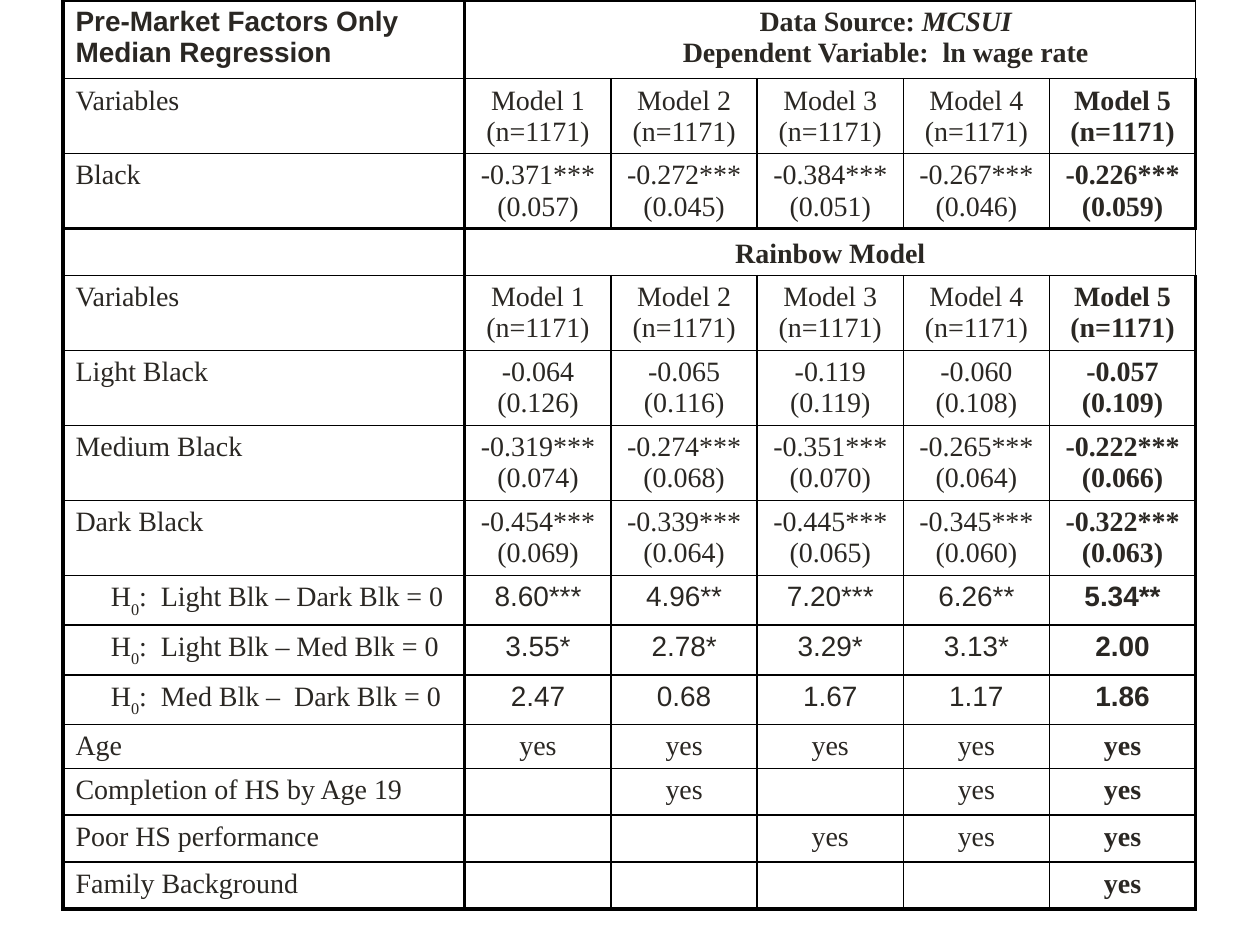
import dataclasses

import lxml.etree
import pptx
import pptx.dml.color
import pptx.enum.text
import pptx.oxml.ns
import pptx.table
import pptx.util

PX = pptx.util.Inches(1) // 200
COLORS = {"text": "2A2723", "border": "000000"}
SERIF, SANS = "Times New Roman", "Arial"
TEXT_SIZE = pptx.util.Pt(16)
THIN, THICK = pptx.util.Pt(1), pptx.util.Pt(2)
LEFT, CENTER = pptx.enum.text.PP_ALIGN.LEFT, pptx.enum.text.PP_ALIGN.CENTER
LABEL_WIDTH, MODEL_WIDTH, MODEL_COUNT = 638, 232, 5
HEADER_HEIGHT, DOUBLE_HEIGHT, TEST_HEIGHT, SINGLE_HEIGHT = 125, 119, 79, 69
TEST_INDENT, HEADER_INDENT = 56, 176


@dataclasses.dataclass
class Span:
    text: str
    bold: bool = False
    italic: bool = False
    font: str = SERIF
    subscript: bool = False


Lines = list[list[Span]]


@dataclasses.dataclass
class Row:
    label: Lines
    values: list[str] = dataclasses.field(default_factory=list)
    height: int = SINGLE_HEIGHT
    value_font: str = SERIF
    label_indent: int = 0
    banner: Lines | None = None
    banner_indent: int = 0


def plain(text: str) -> Lines:
    return [[Span(text)]]


def model_row() -> Row:
    names = [f"Model {number}\n(n=1171)" for number in range(1, MODEL_COUNT + 1)]
    return Row(plain("Variables"), names, DOUBLE_HEIGHT)


def estimate_row(label: str, estimates: str, errors: str) -> Row:
    """Row of coefficients with standard errors in brackets below them."""
    pairs = zip(estimates.split(), errors.split())
    return Row(plain(label), [f"{value}\n({error})" for value, error in pairs], DOUBLE_HEIGHT)


def test_row(hypothesis: str, statistics: str) -> Row:
    label = [[Span("H"), Span("0", subscript=True), Span(f":  {hypothesis} = 0")]]
    return Row(label, statistics.split(), TEST_HEIGHT, SANS, TEST_INDENT)


def control_row(label: str, included: set[int]) -> Row:
    """Row that says yes for each model number with this control."""
    models = range(1, MODEL_COUNT + 1)
    return Row(plain(label), ["yes" if number in included else "" for number in models])


ROWS = [
    Row(
        [[Span("Pre-Market Factors Only Median Regression", bold=True, font=SANS)]],
        height=HEADER_HEIGHT,
        banner=[
            [Span("Data Source: ", bold=True), Span("MCSUI", bold=True, italic=True)],
            [Span("Dependent Variable:  ln wage rate", bold=True)],
        ],
        banner_indent=HEADER_INDENT,
    ),
    model_row(),
    estimate_row("Black", "-0.371*** -0.272*** -0.384*** -0.267*** -0.226***",
                 "0.057 0.045 0.051 0.046 0.059"),
    Row([], banner=[[Span("Rainbow Model", bold=True)]]),
    model_row(),
    estimate_row("Light Black", "-0.064 -0.065 -0.119 -0.060 -0.057",
                 "0.126 0.116 0.119 0.108 0.109"),
    estimate_row("Medium Black", "-0.319*** -0.274*** -0.351*** -0.265*** -0.222***",
                 "0.074 0.068 0.070 0.064 0.066"),
    estimate_row("Dark Black", "-0.454*** -0.339*** -0.445*** -0.345*** -0.322***",
                 "0.069 0.064 0.065 0.060 0.063"),
    test_row("Light Blk – Dark Blk", "8.60*** 4.96** 7.20*** 6.26** 5.34**"),
    test_row("Light Blk – Med Blk", "3.55* 2.78* 3.29* 3.13* 2.00"),
    test_row("Med Blk –  Dark Blk", "2.47 0.68 1.67 1.17 1.86"),
    control_row("Age", {1, 2, 3, 4, 5}),
    control_row("Completion of HS by Age 19", {2, 4, 5}),
    control_row("Poor HS performance", {3, 4, 5}),
    control_row("Family Background", {5}),
]
THICK_RULES = {0, 3, len(ROWS)}
THICK_COLUMN_LINES = {0, 1, MODEL_COUNT + 1}


def write(cell: pptx.table._Cell, lines: Lines, align: pptx.enum.text.PP_ALIGN,
          indent: int = 0) -> None:
    for index, line in enumerate(lines):
        frame = cell.text_frame
        para = frame.add_paragraph() if index else frame.paragraphs[0]
        para.alignment = align
        if indent:
            para._p.get_or_add_pPr().set("indent", str(indent * PX))
        for item in line:
            span = para.add_run()
            span.text = item.text
            formats = {"name": item.font, "size": TEXT_SIZE,
                       "bold": item.bold, "italic": item.italic}
            for name, value in formats.items():
                setattr(span.font, name, value)
            span.font.color.rgb = pptx.dml.color.RGBColor.from_string(COLORS["text"])
            if item.subscript:
                span._r.get_or_add_rPr().set("baseline", "-30000")


def draw_borders(cell: pptx.table._Cell, row: int, column: int) -> None:
    sides = {
        "a:lnL": column in THICK_COLUMN_LINES,
        "a:lnR": column + 1 in THICK_COLUMN_LINES,
        "a:lnT": row in THICK_RULES,
        "a:lnB": row + 1 in THICK_RULES,
    }
    properties = cell._tc.get_or_add_tcPr()
    qn = pptx.oxml.ns.qn
    for tag, thick in sides.items():
        line = lxml.etree.SubElement(properties, qn(tag), w=str(THICK if thick else THIN))
        fill = lxml.etree.SubElement(line, qn("a:solidFill"))
        lxml.etree.SubElement(fill, qn("a:srgbClr"), val=COLORS["border"])


def finish_cell(cell: pptx.table._Cell, row: int, column: int) -> None:
    draw_borders(cell, row, column)
    cell.fill.background()
    if not cell.text_frame.text:
        para = cell.text_frame.paragraphs[0]
        lxml.etree.SubElement(para._p, pptx.oxml.ns.qn("a:endParaRPr"),
                              sz=str(int(TEXT_SIZE.pt * 100)))


def fill_row(table: pptx.table.Table, index: int, row: Row) -> None:
    table.rows[index].height = row.height * PX
    write(table.cell(index, 0), row.label, LEFT, row.label_indent)
    if row.banner:
        banner = table.cell(index, 1)
        banner.merge(table.cell(index, MODEL_COUNT))
        write(banner, row.banner, CENTER, row.banner_indent)
        if not row.label:
            banner.vertical_anchor = pptx.enum.text.MSO_ANCHOR.BOTTOM
    for column, value in enumerate(row.values, start=1):
        bold = column == MODEL_COUNT
        lines = [[Span(text, bold, font=row.value_font)] for text in value.splitlines()]
        write(table.cell(index, column), lines, CENTER)
    for column in range(MODEL_COUNT + 1):
        finish_cell(table.cell(index, column), index, column)


def main() -> None:
    deck = pptx.Presentation()
    deck.slide_width, deck.slide_height = 2000 * PX, 1500 * PX
    page = deck.slides.add_slide(deck.slide_layouts[6])
    widths = [LABEL_WIDTH] + [MODEL_WIDTH] * MODEL_COUNT
    height = sum(row.height for row in ROWS)
    table = page.shapes.add_table(len(ROWS), len(widths), 100 * PX, 0,
                                  sum(widths) * PX, height * PX).table
    for name in ("first_row", "horz_banding"):
        setattr(table, name, False)
    for column, width in zip(table.columns, widths):
        column.width = width * PX
    for index, row in enumerate(ROWS):
        fill_row(table, index, row)
    deck.save("out.pptx")


if __name__ == "__main__":
    main()
